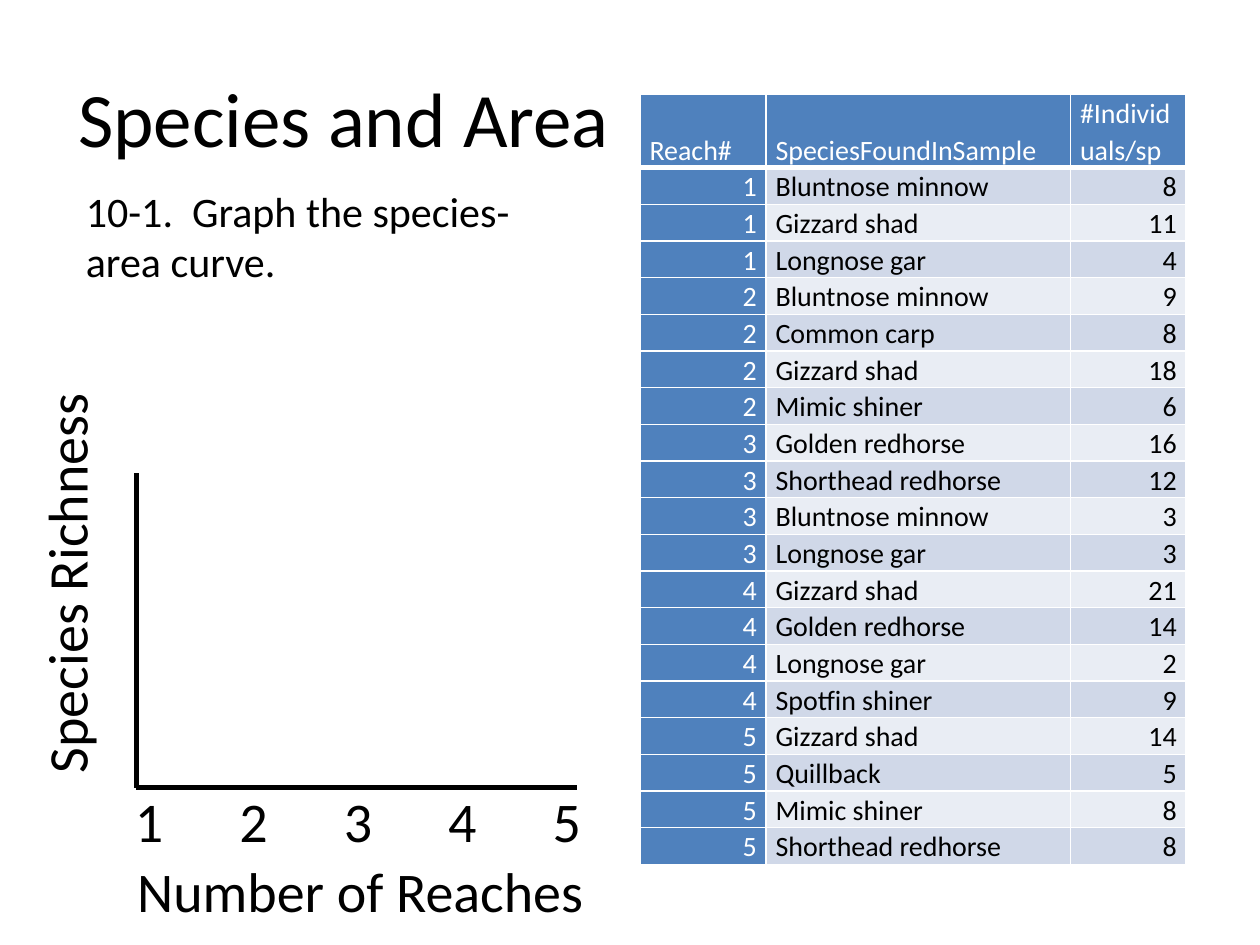
from lxml.etree import SubElement
from pptx import Presentation
from pptx.dml.color import RGBColor
from pptx.enum.shapes import MSO_CONNECTOR
from pptx.enum.text import MSO_ANCHOR, MSO_AUTO_SIZE, PP_ALIGN
from pptx.oxml import parse_xml
from pptx.oxml.ns import nsdecls, qn
from pptx.util import Pt

# Content
TITLE = "Species and Area"
TASK = "10-1.  Graph the species-area curve."
HORIZONTAL_LABEL = "Number of Reaches"
VERTICAL_LABEL = "Species Richness"
REACHES = ["1", "2", "3", "4", "5"]
HEADER = ("Reach#", "SpeciesFoundInSample", "#Individuals/sp")
SAMPLES = [
    (1, "Bluntnose minnow", 8),
    (1, "Gizzard shad", 11),
    (1, "Longnose gar", 4),
    (2, "Bluntnose minnow", 9),
    (2, "Common carp", 8),
    (2, "Gizzard shad", 18),
    (2, "Mimic shiner", 6),
    (3, "Golden redhorse", 16),
    (3, "Shorthead redhorse", 12),
    (3, "Bluntnose minnow", 3),
    (3, "Longnose gar", 3),
    (4, "Gizzard shad", 21),
    (4, "Golden redhorse", 14),
    (4, "Longnose gar", 2),
    (4, "Spotfin shiner", 9),
    (5, "Gizzard shad", 14),
    (5, "Quillback", 5),
    (5, "Mimic shiner", 8),
    (5, "Shorthead redhorse", 8),
]

# Style
FONT = "Calibri"
BLACK = RGBColor(0x00, 0x00, 0x00)
WHITE = RGBColor(0xFF, 0xFF, 0xFF)
BLUE = RGBColor(0x4F, 0x81, 0xBD)
BANDS = (RGBColor(0xE9, 0xED, 0xF4), RGBColor(0xD0, 0xD8, 0xE8))

# Layout, in points
TABLE_LEFT, TABLE_TOP = 365.8, 54
COLUMN_WIDTHS = (72, 174, 66)
ROW_HEIGHT = 20.9
AXIS_LEFT, AXIS_RIGHT, AXIS_TOP, AXIS_BOTTOM = 78, 330, 270, 450
REACH_STEP = 59.7


def set_attributes(target, values):
    for name, value in values.items():
        setattr(target, name, value)


def write(text_frame, text, size, color=BLACK, alignment=PP_ALIGN.LEFT):
    paragraph = text_frame.paragraphs[0]
    paragraph.alignment = alignment
    run = paragraph.add_run()
    run.text = text
    set_attributes(run.font, {"name": FONT, "size": Pt(size), "bold": False})
    run.font.color.rgb = color
    return paragraph


def add_label(slide, box, text, size, alignment=PP_ALIGN.CENTER, wrap=False, anchor=MSO_ANCHOR.TOP):
    shape = slide.shapes.add_textbox(*map(Pt, box))
    set_attributes(shape.text_frame, {
        "word_wrap": wrap,
        "auto_size": MSO_AUTO_SIZE.SHAPE_TO_FIT_TEXT,
        "vertical_anchor": anchor,
    })
    return shape, write(shape.text_frame, text, size, alignment=alignment)


def add_axis(slide, end_x, end_y):
    points = (AXIS_LEFT, AXIS_BOTTOM, end_x, end_y)
    line = slide.shapes.add_connector(MSO_CONNECTOR.STRAIGHT, *map(Pt, points))
    line.line.color.rgb = BLACK
    line.line.width = Pt(3)
    SubElement(line._element.spPr, qn("a:effectLst"))


def set_borders(cell, bottom_width):
    properties = cell._tc.get_or_add_tcPr()
    widths = {"lnL": 1, "lnR": 1, "lnT": 1, "lnB": bottom_width}
    for position, (side, width) in enumerate(widths.items()):
        properties.insert(position, parse_xml(
            f'<a:{side} {nsdecls("a")} w="{Pt(width)}"><a:solidFill>'
            f'<a:srgbClr val="{WHITE}"/></a:solidFill></a:{side}>'))


def add_sample_table(slide):
    rows = [HEADER] + SAMPLES
    height = ROW_HEIGHT * (len(rows) + 1)
    frame = (TABLE_LEFT, TABLE_TOP, sum(COLUMN_WIDTHS), height)
    table = slide.shapes.add_table(len(rows), len(HEADER), *map(Pt, frame)).table
    for column, width in zip(table.columns, COLUMN_WIDTHS):
        column.width = Pt(width)
    for row_index, values in enumerate(rows):
        is_header = row_index == 0
        # The header holds two lines
        table.rows[row_index].height = Pt(ROW_HEIGHT * (2 if is_header else 1))
        for column_index, value in enumerate(values):
            cell = table.cell(row_index, column_index)
            is_blue = is_header or column_index == 0
            set_attributes(cell, {
                "margin_left": Pt(5.4), "margin_right": Pt(5.4),
                "margin_top": 0, "margin_bottom": 0,
                "vertical_anchor": MSO_ANCHOR.BOTTOM,
            })
            cell.fill.solid()
            cell.fill.fore_color.rgb = BLUE if is_blue else BANDS[row_index % 2]
            set_borders(cell, 3 if is_header else 1)
            alignment = PP_ALIGN.RIGHT if isinstance(value, int) else PP_ALIGN.LEFT
            paragraph = write(cell.text_frame, str(value), 16, WHITE if is_blue else BLACK, alignment)
            paragraph.line_spacing = 1.07


def main():
    presentation = Presentation()
    presentation.slide_width, presentation.slide_height = Pt(720), Pt(540)
    slide = presentation.slides.add_slide(presentation.slide_layouts[5])

    # Title
    title = slide.shapes.title
    set_attributes(title, {"left": Pt(36), "top": Pt(21.6), "width": Pt(321), "height": Pt(90)})
    title.text_frame.vertical_anchor = MSO_ANCHOR.MIDDLE
    write(title.text_frame, TITLE, 44, alignment=PP_ALIGN.CENTER)

    # Samples and task
    add_sample_table(slide)
    add_label(slide, (42, 102, 258, 65.4), TASK, 24, PP_ALIGN.LEFT, True, MSO_ANCHOR.MIDDLE)

    # Empty graph
    add_axis(slide, AXIS_RIGHT, AXIS_BOTTOM)
    add_axis(slide, AXIS_LEFT, AXIS_TOP)
    add_label(slide, (70, 486, 272, 46), HORIZONTAL_LABEL, 32)

    # Reach numbers on evenly spaced tab stops
    _, numbers = add_label(slide, (70, 446, 272, 46), "\t".join(REACHES), 32, PP_ALIGN.LEFT)
    tab_stops = SubElement(numbers._p.get_or_add_pPr(), qn("a:tabLst"))
    for step in range(1, len(REACHES)):
        SubElement(tab_stops, qn("a:tab"), pos=str(Pt(step * REACH_STEP)), algn="l")

    vertical, _ = add_label(slide, (-79, 310.3, 233, 46), VERTICAL_LABEL, 32)
    vertical.rotation = 270

    presentation.save("out.pptx")


if __name__ == "__main__":
    main()
